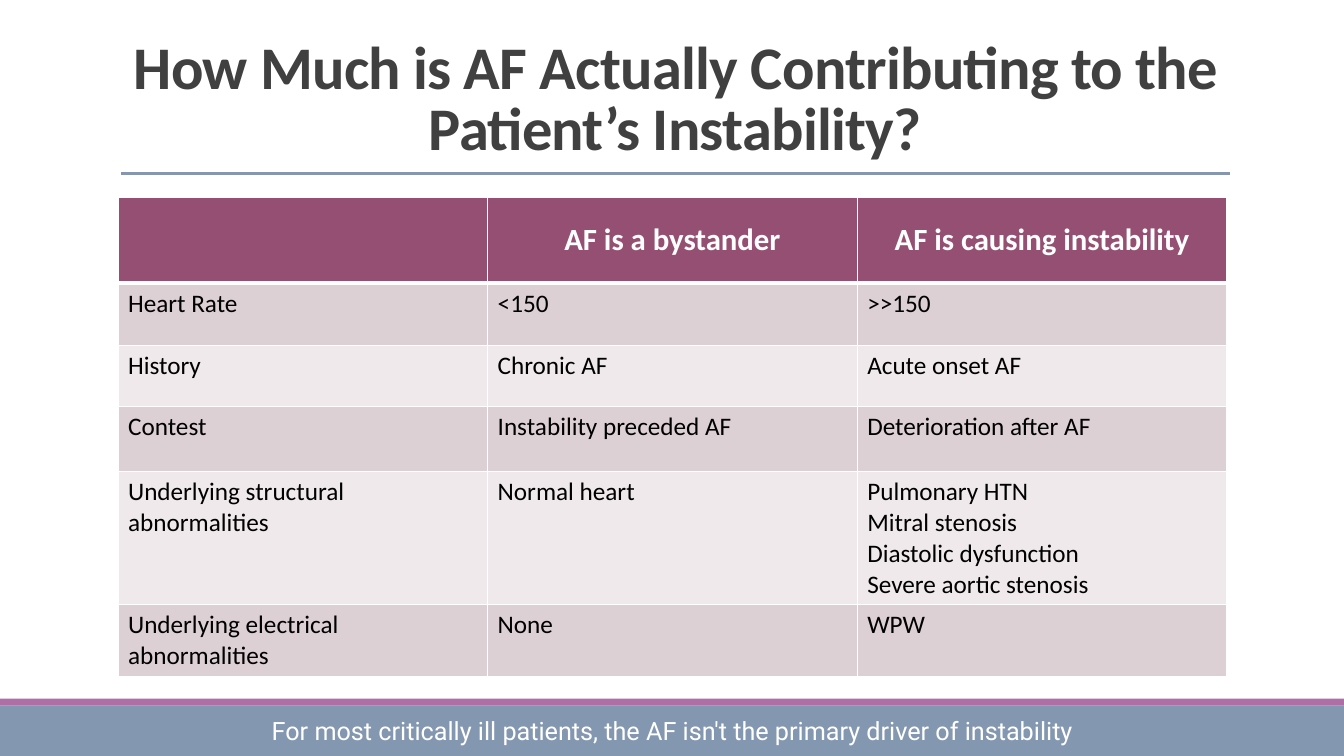
from lxml import etree
from pptx import Presentation
from pptx.dml.color import RGBColor
from pptx.enum.shapes import MSO_CONNECTOR, MSO_SHAPE
from pptx.enum.text import MSO_ANCHOR, MSO_AUTO_SIZE, PP_ALIGN
from pptx.oxml.ns import qn
from pptx.util import Inches, Pt

RECT, STRAIGHT = MSO_SHAPE.RECTANGLE, MSO_CONNECTOR.STRAIGHT
CENTER, LEFT = PP_ALIGN.CENTER, PP_ALIGN.LEFT
TOP, MIDDLE, BOTTOM = MSO_ANCHOR.TOP, MSO_ANCHOR.MIDDLE, MSO_ANCHOR.BOTTOM
NO_FIT = MSO_AUTO_SIZE.NONE

COLORS = {
    "white": "FFFFFF", "black": "000000", "title": "404040",
    "bar": "8497B0", "stripe": "B06EA7", "rule": "8496B0",
    "header": "954F72", "band_dark": "DDD0D5", "band_light": "EFE9EB",
}

HEADER = ["", "AF is a bystander", "AF is causing instability"]
ROWS = [
    ["Heart Rate", "<150", ">>150"],
    ["History", "Chronic AF", "Acute onset AF"],
    ["Contest", "Instability preceded AF", "Deterioration after AF"],
    ["Underlying structural abnormalities", "Normal heart",
     "Pulmonary HTN\nMitral stenosis\nDiastolic dysfunction\nSevere aortic stenosis"],
    ["Underlying electrical abnormalities", "None", "WPW"],
]
ROW_HEIGHTS = [11.33, 8.27, 8, 8.67, 17.6, 9.47]


def rgb(name):
    return RGBColor.from_string(COLORS[name])


class SlideBuilder:
    """Draws on one slide; lengths are percentages of its width and height."""

    def __init__(self, prs, font="Calibri"):
        self.prs, self.font = prs, font
        self.s = prs.slides.add_slide(prs.slide_layouts[5])

    def x(self, share):
        return round(self.prs.slide_width * share / 100)

    def y(self, share):
        return round(self.prs.slide_height * share / 100)

    def box(self, left, top, width, height):
        return self.x(left), self.y(top), self.x(width), self.y(height)

    def add_text(self, tf, text, size, color, bold=False, align=LEFT, font=None,
                 line_spacing=None, tracking=None):
        for i, line in enumerate(text.split("\n")):
            p = tf.add_paragraph() if i else tf.paragraphs[0]
            p.alignment = align
            if line_spacing:
                p.line_spacing = line_spacing
            r = p.add_run()
            r.text = line
            r.font.name, r.font.size, r.font.bold = font or self.font, Pt(size), bold
            r.font.color.rgb = rgb(color)
            if tracking:
                r._r.get_or_add_rPr().set("spc", str(tracking))

    def title(self, text, *area):
        sp = self.s.shapes.title
        sp.left, sp.top, sp.width, sp.height = self.box(*area)
        tf = sp.text_frame
        tf.word_wrap, tf.auto_size, tf.vertical_anchor = True, NO_FIT, BOTTOM
        self.add_text(tf, text, 43.2, "title", True, CENTER,
                      line_spacing=0.85, tracking=-50)

    def bar(self, color, *area):
        sp = self.s.shapes.add_shape(RECT, *self.box(*area))
        sp.shadow.inherit = False
        sp.fill.solid()
        sp.fill.fore_color.rgb = rgb(color)
        sp.line.fill.background()

    def rule(self, x1, x2, y, color, width):
        line = self.s.shapes.add_connector(
            STRAIGHT, self.x(x1), self.y(y), self.x(x2), self.y(y))
        line.line.color.rgb = rgb(color)
        line.line.width = Pt(width)
        etree.SubElement(line._element.spPr, qn("a:effectLst"))

    def note(self, text, *area, size=18, color="white", font=None):
        tf = self.s.shapes.add_textbox(*self.box(*area)).text_frame
        tf.word_wrap = True
        self.add_text(tf, text, size, color, align=CENTER, font=font)

    def borders(self, cell, widths):
        tcPr = cell._tc.get_or_add_tcPr()
        for side, width in widths.items():
            ln = etree.SubElement(tcPr, qn(f"a:ln{side}"), w=str(Pt(width)))
            fill = etree.SubElement(ln, qn("a:solidFill"))
            etree.SubElement(fill, qn("a:srgbClr"), val=COLORS["white"])

    def table(self, header, rows, heights, left, top, width):
        area = self.box(left, top, width, sum(heights))
        table = self.s.shapes.add_table(len(heights), len(header), *area).table
        for column in table.columns:
            column.width = self.x(width / len(header))
        for i, (values, height) in enumerate(zip([header] + rows, heights)):
            table.rows[i].height = self.y(height)
            head = i == 0
            fill = "header" if head else "band_dark" if i % 2 else "band_light"
            widths = {"L": 1, "R": 1, "T": 3 if i == 1 else 1, "B": 3 if head else 1}
            for j, value in enumerate(values):
                cell = table.cell(i, j)
                self.borders(cell, widths)
                cell.fill.solid()
                cell.fill.fore_color.rgb = rgb(fill)
                cell.vertical_anchor = MIDDLE if head else TOP
                if value and head:
                    self.add_text(cell.text_frame, value, 22, "white", True, CENTER)
                elif value:
                    self.add_text(cell.text_frame, value, 18, "black")


def main():
    prs = Presentation()
    prs.slide_width, prs.slide_height = Inches(13.33), Inches(7.5)
    b = SlideBuilder(prs)

    # Footer band and title rule
    b.bar("bar", 0, 93.33, 100, 6.67)
    b.bar("stripe", 0, 92.4, 100, 0.93)
    b.rule(9, 91.5, 22.93, "rule", 2.25)

    # Title
    b.title("How Much is AF Actually Contributing to the Patient’s Instability?",
            9, 4.13, 82.5, 18.13)

    # Comparison table
    b.table(HEADER, ROWS, ROW_HEIGHTS, 8.78, 26.13, 82.5)

    # Takeaway in the footer band
    b.note("For most critically ill patients, the AF isn't the primary driver of instability",
           18.98, 94, 62.12, 5.33, font="Roboto")

    prs.save("out.pptx")


if __name__ == "__main__":
    main()
